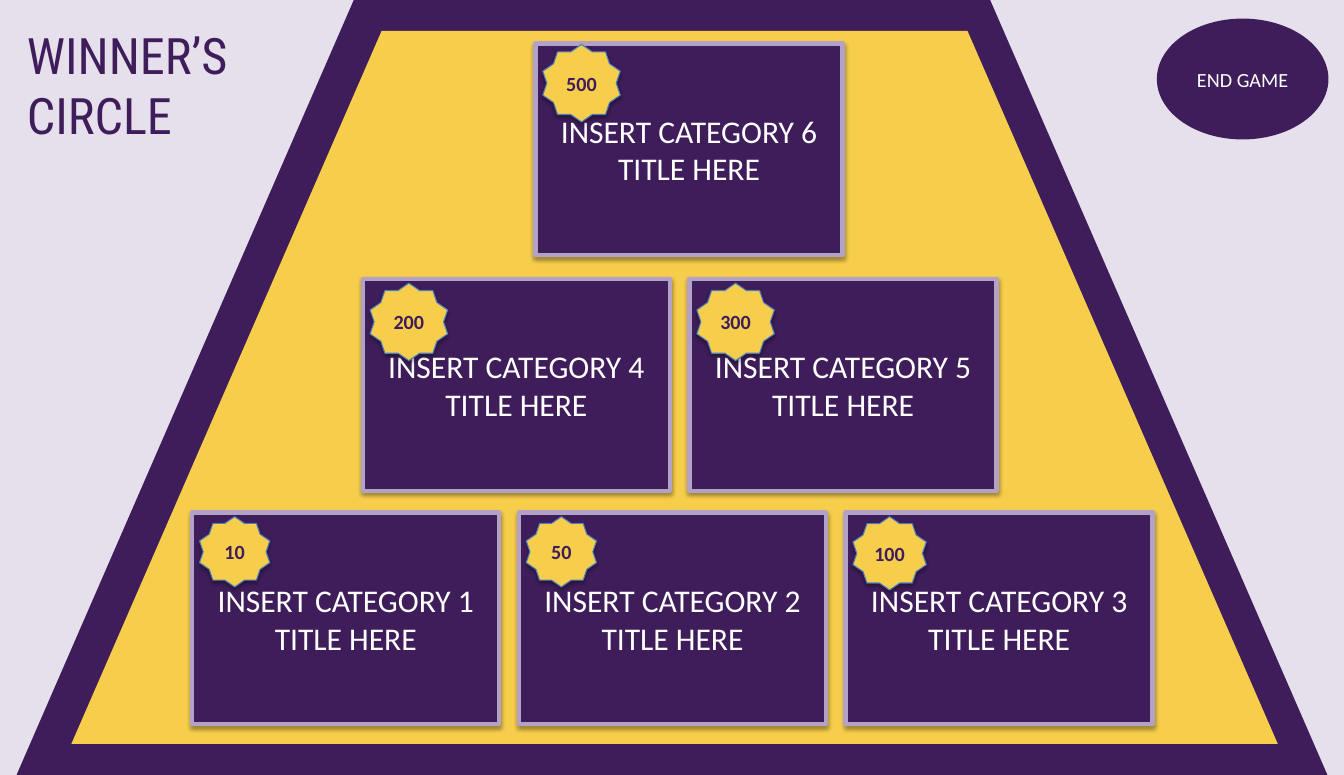
from lxml import etree
from pptx import Presentation
from pptx.dml.color import RGBColor
from pptx.enum.shapes import MSO_SHAPE
from pptx.enum.text import MSO_ANCHOR, MSO_AUTO_SIZE, PP_ALIGN
from pptx.oxml import parse_xml
from pptx.oxml.ns import nsdecls
from pptx.util import Inches, Pt

COLORS = {
    "background": "E6E0EC",
    "purple": "3F1D5A",
    "gold": "F7CE4C",
    "card_border": "B3A2C7",
    "badge_border": "4B7EBC",
    "white": "FFFFFF",
}
CARD_WIDTH, CARD_HEIGHT, CARD_PITCH = 2.97, 2.05, 3.16
BADGE_LEFT = 0.07

# left, top, badge offset from the card top, (category number, points, badge size)
ROWS = [
    (1.86, 4.96, 0.04, [(1, 10, 0.68), (2, 50, 0.68), (3, 100, 0.71)]),
    (3.51, 2.7, 0.04, [(4, 200, 0.75), (5, 300, 0.75)]),
    (5.18, 0.42, 0.01, [(6, 500, 0.75)]),
]


def color(name):
    return RGBColor.from_string(COLORS[name])


def add_filled(slide, preset, box, fill, border=None, border_width=0):
    shape = slide.shapes.add_shape(preset, *map(Inches, box))
    shape.shadow.inherit = False
    shape.fill.solid()
    shape.fill.fore_color.rgb = color(fill)
    if border:
        shape.line.color.rgb = color(border)
        shape.line.width = Pt(border_width)
    else:
        shape.line.fill.background()
    return shape


def add_shadow(shape):
    effects = shape.element.spPr.find(
        "{http://schemas.openxmlformats.org/drawingml/2006/main}effectLst")
    effects.append(parse_xml(
        f'<a:outerShdw {nsdecls("a")} blurRad="{Pt(3.1)}" dist="{Pt(1.8)}" '
        'dir="5400000" rotWithShape="0"><a:srgbClr val="000000">'
        '<a:alpha val="35000"/></a:srgbClr></a:outerShdw>'))


def write(shape, text, size, text_color, font="Calibri", bold=False,
          align=PP_ALIGN.CENTER, anchor=MSO_ANCHOR.MIDDLE):
    frame = shape.text_frame
    frame.text = text
    frame.word_wrap = True
    frame.vertical_anchor = anchor
    for paragraph in frame.paragraphs:
        paragraph.alignment = align
        for run in paragraph.runs:
            run.font.size = Pt(size)
            run.font.name = font
            run.font.bold = bold
            run.font.color.rgb = color(text_color)


def add_pyramid(slide, box, fill):
    pyramid = add_filled(slide, MSO_SHAPE.TRAPEZOID, box, fill)
    pyramid.adjustments[0] = 0.435


def add_card(slide, box, category, points, badge_size, badge_top):
    left, top, width, height = box
    card = add_filled(slide, MSO_SHAPE.RECTANGLE, box, "purple", "card_border", 3)
    add_shadow(card)
    write(card, f"INSERT CATEGORY {category} TITLE HERE", 22, "white")

    badge_box = (left + BADGE_LEFT, top + badge_top, badge_size, badge_size)
    badge = add_filled(slide, MSO_SHAPE.STAR_10_POINT, badge_box, "gold",
                       "badge_border", 0.75)
    add_shadow(badge)
    write(badge, str(points), 14, "purple", bold=True)
    badge.text_frame.word_wrap = False


def add_title(slide, box):
    title = slide.shapes.title
    title.left, title.top, title.width, title.height = map(Inches, box)
    write(title, "WINNER’S\nCIRCLE", 35, "purple", "Roboto Condensed",
          align=PP_ALIGN.LEFT, anchor=MSO_ANCHOR.TOP)
    title.text_frame.auto_size = MSO_AUTO_SIZE.NONE


def add_end_button(slide, box):
    button = add_filled(slide, MSO_SHAPE.OVAL, box, "purple")
    write(button, "END GAME", 14, "white")


def main():
    deck = Presentation()
    deck.slide_width, deck.slide_height = Inches(13), Inches(7.5)
    slide = deck.slides.add_slide(deck.slide_layouts[5])
    slide.background.fill.solid()
    slide.background.fill.fore_color.rgb = color("background")

    add_pyramid(slide, (0.16, 0, 12.68, 7.5), "purple")
    add_pyramid(slide, (0.69, 0.3, 11.67, 6.9), "gold")
    for left, top, badge_top, cards in ROWS:
        for column, (category, points, badge_size) in enumerate(cards):
            box = (left + column * CARD_PITCH, top, CARD_WIDTH, CARD_HEIGHT)
            add_card(slide, box, category, points, badge_size, badge_top)
    add_title(slide, (0.16, 0.18, 2.57, 1.28))
    add_end_button(slide, (11.19, 0.18, 1.66, 1.17))

    deck.save("out.pptx")


if __name__ == "__main__":
    main()
